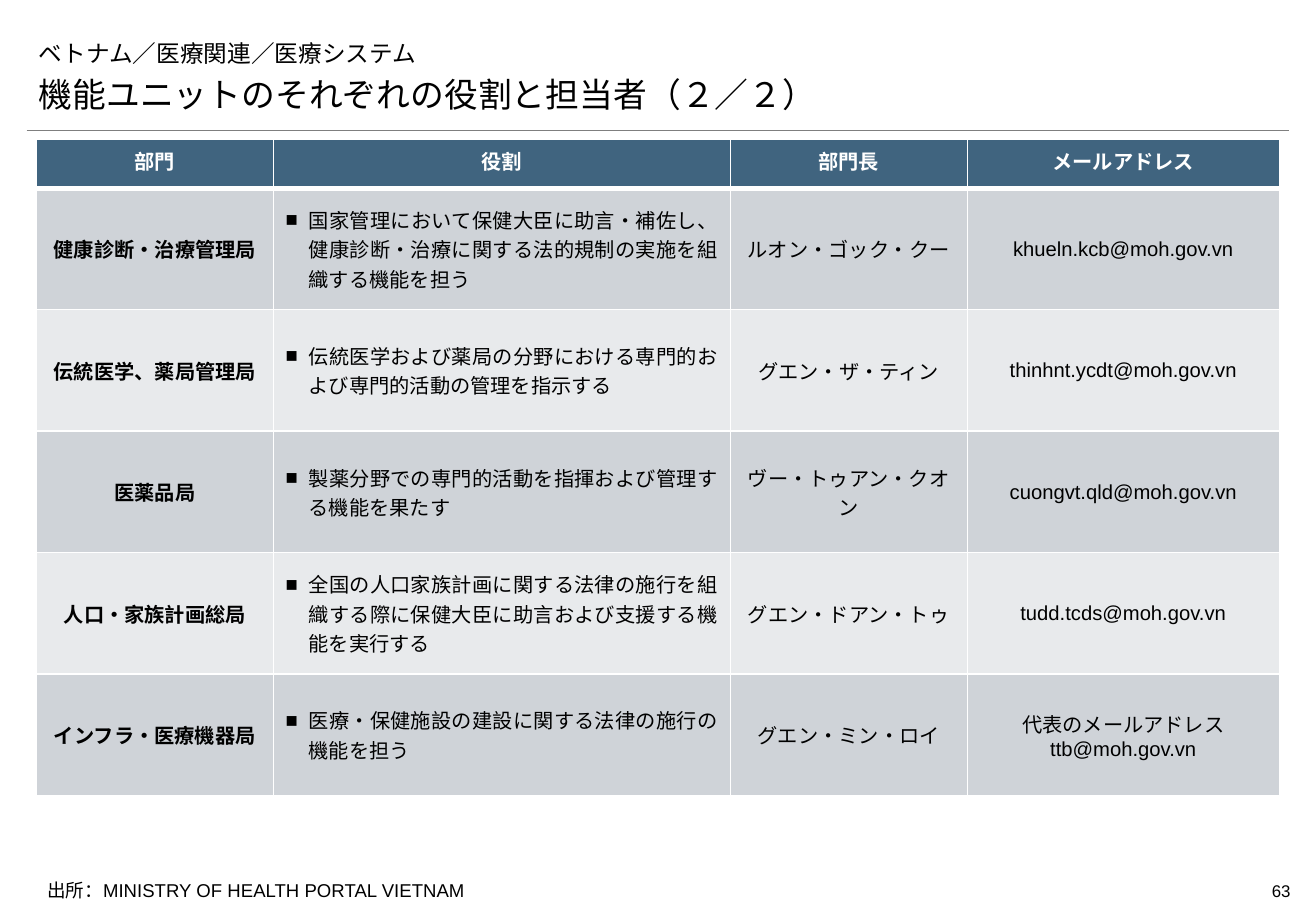
"""Build a slide with a table of ministry departments, roles and contacts."""
from dataclasses import dataclass

from lxml import etree
from pptx import Presentation
from pptx import util as u
from pptx.dml.color import RGBColor
from pptx.enum import shapes, text
from pptx.oxml.ns import qn

Inches, Pt = u.Inches, u.Pt
ALIGN, ANCHOR = text.PP_ALIGN, text.MSO_ANCHOR


@dataclass(frozen=True)
class Theme:
    """Colours, fonts and type sizes of the slide."""
    ink: str = "000000"
    white: str = "FFFFFF"
    header: str = "40647F"
    bands: tuple = ("CFD3D8", "E8EAEC")
    rule: str = "7F7F7F"
    latin: str = "Arial"
    cjk: str = "Noto Sans CJK JP"
    heading: str = "Montserrat"
    path_size: int = 14
    title_size: int = 20
    table_size: int = 12
    source_size: int = 11
    page_size: int = 10


THEME = Theme()
COLUMNS = (1.95, 3.76, 1.95, 2.57)
ROW_HEIGHTS = (0.4, 1, 1, 1, 1, 1)
HEADERS = ("部門", "役割", "部門長", "メールアドレス")
DEPARTMENTS = (
    ("健康診断・治療管理局",
     "国家管理において保健大臣に助言・補佐し、健康診断・治療に関する法的規制の実施を組織する機能を担う",
     "ルオン・ゴック・クー", "khueln.kcb@moh.gov.vn"),
    ("伝統医学、薬局管理局",
     "伝統医学および薬局の分野における専門的および専門的活動の管理を指示する",
     "グエン・ザ・ティン", "thinhnt.ycdt@moh.gov.vn"),
    ("医薬品局",
     "製薬分野での専門的活動を指揮および管理する機能を果たす",
     "ヴー・トゥアン・クオン", "cuongvt.qld@moh.gov.vn"),
    ("人口・家族計画総局",
     "全国の人口家族計画に関する法律の施行を組織する際に保健大臣に助言および支援する機能を実行する",
     "グエン・ドアン・トゥ", "tudd.tcds@moh.gov.vn"),
    ("インフラ・医療機器局",
     "医療・保健施設の建設に関する法律の施行の機能を担う",
     "グエン・ミン・ロイ", "代表のメールアドレス\nttb@moh.gov.vn"),
)


def add_bullet(p, char="■", indent=0.19):
    """Give a paragraph a bullet with a hanging indent."""
    pPr = p._p.get_or_add_pPr()
    pPr.set("marL", str(Inches(indent)))
    pPr.set("indent", str(-Inches(indent)))
    etree.SubElement(pPr, qn("a:buFont"), typeface=THEME.latin)
    etree.SubElement(pPr, qn("a:buChar"), char=char)


def write(tf, content, size, font=THEME.latin, color=THEME.ink, bold=False,
          align=ALIGN.LEFT, bullet=False):
    """Write each line of content as a formatted paragraph."""
    for i, line in enumerate(content.split("\n")):
        p = tf.add_paragraph() if i else tf.paragraphs[0]
        p.alignment = align
        if bullet:
            add_bullet(p)
        r = p.add_run()
        r.text = line
        r.font.size = Pt(size)
        r.font.bold = bold
        r.font.name = font
        r.font.color.rgb = RGBColor.from_string(color)
        etree.SubElement(r._r.get_or_add_rPr(), qn("a:ea"), typeface=THEME.cjk)


def add_text(s, content, box, size, anchor=ANCHOR.TOP, inset=0.1, **fmt):
    """Add a wrapped text box."""
    tf = s.shapes.add_textbox(*map(Inches, box)).text_frame
    tf.word_wrap = True
    tf.vertical_anchor = anchor
    tf.margin_left = tf.margin_right = Inches(inset)
    write(tf, content, size, **fmt)


def add_rule(s, left, right, y):
    """Add the thin line under the title."""
    line = s.shapes.add_connector(shapes.MSO_CONNECTOR.STRAIGHT, Inches(left),
                                  Inches(y), Inches(right), Inches(y))
    line.line.color.rgb = RGBColor.from_string(THEME.rule)
    line.line.width = Pt(0.25)
    etree.SubElement(line._element.spPr, qn("a:effectLst"))


def style_cell(cell, fill, top=1, bottom=1):
    """Set the fill and the white borders of a cell."""
    tcPr = cell._tc.get_or_add_tcPr()
    for side, width in (("L", 1), ("R", 1), ("T", top), ("B", bottom)):
        ln = etree.SubElement(tcPr, qn(f"a:ln{side}"), w=str(Pt(width)))
        etree.SubElement(etree.SubElement(ln, qn("a:solidFill")),
                         qn("a:srgbClr"), val=THEME.white)
    cell.fill.solid()
    cell.fill.fore_color.rgb = RGBColor.from_string(fill)


def add_departments(s, left, top):
    """Add the table of departments."""
    table = s.shapes.add_table(
        len(ROW_HEIGHTS), len(COLUMNS), Inches(left), Inches(top),
        Inches(sum(COLUMNS)), Inches(sum(ROW_HEIGHTS))).table
    for column, width in zip(table.columns, COLUMNS):
        column.width = Inches(width)
    for row, height in zip(table.rows, ROW_HEIGHTS):
        row.height = Inches(height)
    for j, header in enumerate(HEADERS):
        cell = table.cell(0, j)
        style_cell(cell, THEME.header, bottom=3)
        write(cell.text_frame, header, THEME.table_size, bold=True,
              font=THEME.cjk if j < 2 else THEME.latin,
              color=THEME.white, align=ALIGN.CENTER)
    for i, department in enumerate(DEPARTMENTS):
        for j, content in enumerate(department):
            cell = table.cell(i + 1, j)
            style_cell(cell, THEME.bands[i % 2], top=1 if i else 3)
            cell.vertical_anchor = ANCHOR.MIDDLE
            is_role = j == 1
            write(cell.text_frame, content, THEME.table_size, bold=j == 0,
                  font=THEME.latin if j or i == 4 else THEME.cjk,
                  align=ALIGN.JUSTIFY if is_role else ALIGN.CENTER,
                  bullet=is_role)


def main():
    """Build and save the slide."""
    prs = Presentation()
    prs.slide_width, prs.slide_height = Inches(10.83), Inches(7.5)
    s = prs.slides.add_slide(prs.slide_layouts[6])
    add_rule(s, 0.22, 10.61, 1.07)
    add_text(s, "63", (9.83, 7.2, 0.79, 0.27), THEME.page_size, inset=0,
             align=ALIGN.RIGHT)
    add_text(s, "ベトナム／医療関連／医療システム", (0.22, 0.26, 10.39, 0.34),
             THEME.path_size, anchor=ANCHOR.BOTTOM, font=THEME.cjk)
    add_text(s, "機能ユニットのそれぞれの役割と担当者（２／２）",
             (0.22, 0.62, 10.4, 0.37), THEME.title_size,
             anchor=ANCHOR.BOTTOM, font=THEME.heading)
    add_departments(s, 0.3, 1.15)
    add_text(s, "出所：MINISTRY OF HEALTH PORTAL VIETNAM",
             (0.29, 7.19, 5.42, 0.29), THEME.source_size)
    prs.save("out.pptx")


if __name__ == "__main__":
    main()
